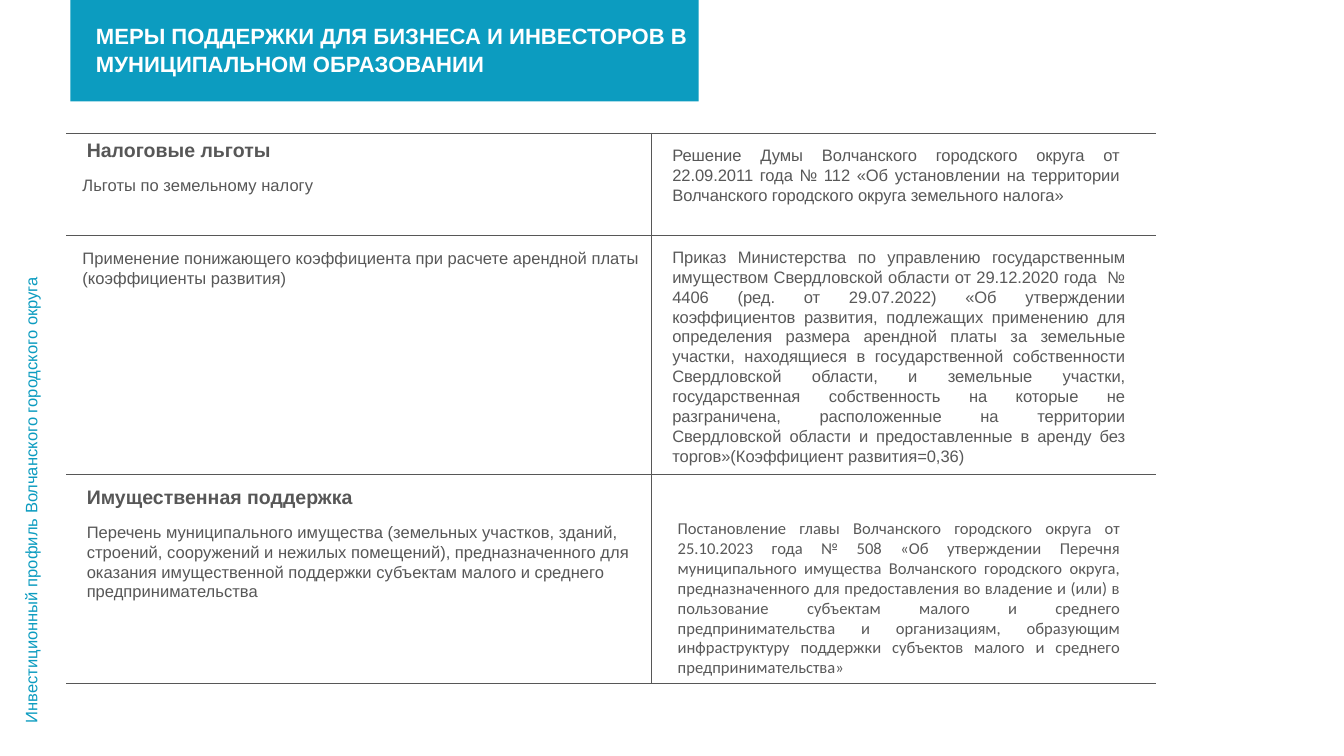
"""Build the slide on support measures for business and investors."""
from dataclasses import dataclass

from pptx import Presentation
from pptx import util as u
from pptx.dml.color import RGBColor
from pptx.enum import text
from pptx.oxml.ns import qn
from lxml import etree

SCALE = 9144


@dataclass(frozen=True)
class Theme:
    """Colours, fonts and type sizes of the slide."""
    accent: str = "0C9CC0"
    ink: str = "575757"
    soft_ink: str = "595959"
    white: str = "FFFFFF"
    font: str = "Arial"
    alt_font: str = "Calibri"
    title: float = 26
    heading: float = 23
    body: float = 19.5
    leading: float = 23.1


THEME = Theme()
TIGHT = -10
COLUMNS = (958, 825)
ROWS = (167, 392, 342)

TAX_DECISION = (
    "Решение Думы Волчанского городского округа от 22.09.2011 года № 112 "
    "«Об установлении на территории Волчанского городского округа земельного налога»")
RENT_ORDER = (
    "Приказ Министерства по управлению государственным имуществом Свердловской области "
    "от 29.12.2020 года  № 4406 (ред. от 29.07.2022) «Об утверждении коэффициентов развития, "
    "подлежащих применению для определения размера арендной платы за земельные участки, "
    "находящиеся в государственной собственности Свердловской области, и земельные участки, "
    "государственная собственность на которые не разграничена, расположенные на территории "
    "Свердловской области и предоставленные в аренду без торгов»(Коэффициент развития=0,36)")
PROPERTY_LIST = (
    "Перечень муниципального имущества (земельных участков, зданий, строений, сооружений "
    "и нежилых помещений), предназначенного для оказания имущественной поддержки субъектам "
    "малого и среднего предпринимательства")
PROPERTY_DECREE = (
    "Постановление главы Волчанского городского округа от 25.10.2023 года № 508 "
    "«Об утверждении Перечня муниципального имущества Волчанского городского округа, "
    "предназначенного для предоставления во владение и (или) в пользование субъектам малого "
    "и среднего предпринимательства и организациям, образующим инфраструктуру поддержки "
    "субъектов малого и среднего предпринимательства»")


def px(length):
    """Turn a length in px into EMU."""
    return u.Emu(length * SCALE)


def set_margins(holder, left, top, right=0, bottom=0):
    """Set the inner margins of a text frame or table cell."""
    holder.margin_left, holder.margin_top = px(left), px(top)
    holder.margin_right, holder.margin_bottom = px(right), px(bottom)


def write(frame, words, size=THEME.body, color=THEME.ink, font=THEME.font, bold=False,
          align=text.PP_ALIGN.LEFT, leading=None, tracking=0):
    """Write one formatted paragraph into a text frame."""
    para = frame.paragraphs[0]
    para.alignment = align
    if leading:
        para.line_spacing = leading
    span = para.add_run()
    span.text = words
    span.font.size, span.font.name, span.font.bold = u.Pt(size), font, bold
    span.font.color.rgb = RGBColor.from_string(color)
    if tracking:
        span.font._element.set("spc", str(tracking))


def add_title(page, words):
    """Turn the title placeholder into the coloured banner."""
    title = page.shapes.title
    title.left, title.top, title.width, title.height = map(px, (115, 0, 1028, 166))
    title.fill.solid()
    title.fill.fore_color.rgb = RGBColor.from_string(THEME.accent)
    frame = title.text_frame
    frame.auto_size = text.MSO_AUTO_SIZE.NONE
    frame.vertical_anchor = text.MSO_ANCHOR.TOP
    frame.word_wrap = True
    set_margins(frame, 42, 34)
    write(frame, words, THEME.title, THEME.white, bold=True, leading=1.06)


def add_text(page, place, words, margins=(1, 2, 0, 0), **style):
    """Add a wrapped text box and return its frame."""
    frame = page.shapes.add_textbox(*map(px, place)).text_frame
    frame.word_wrap = True
    set_margins(frame, *margins)
    write(frame, words, **style)
    return frame


def add_heading(page, top, words):
    """Add the bold heading of a support group."""
    add_text(page, (141, top, 439, 41), words, (1, 1, 0, 0), size=THEME.heading, bold=True)


def add_side_label(page, words):
    """Add the label that runs up the left edge."""
    frame = add_text(page, (35, 429, 32, 755), words, (0, 0, 0, 0),
                     color=THEME.accent, leading=u.Pt(22.8))
    frame._txBody.bodyPr.set("vert", "vert270")


def set_borders(cell, shown):
    """Draw the named cell sides and clear the others."""
    properties = cell._tc.get_or_add_tcPr()
    for index, side in enumerate("LRTB"):
        line = etree.Element(qn(f"a:ln{side}"), w=str(u.Pt(1)))
        if side in shown:
            fill = etree.SubElement(line, qn("a:solidFill"))
            etree.SubElement(fill, qn("a:srgbClr"), val=THEME.ink)
        else:
            etree.SubElement(line, qn("a:noFill"))
        properties.insert(index, line)


def add_measures_table(page):
    """Add the ruled table with the measures in its left column."""
    place = map(px, (108, 218, sum(COLUMNS), sum(ROWS)))
    table = page.shapes.add_table(len(ROWS), len(COLUMNS), *place).table
    table.first_row = table.horz_banding = False
    for column, width in zip(table.columns, COLUMNS):
        column.width = px(width)
    for row, height in zip(table.rows, ROWS):
        row.height = px(height)
        for cell, sides in zip(row.cells, ("RTB", "LTB")):
            cell.fill.background()
            set_borders(cell, sides)
    measures = (
        (71, "Льготы по земельному налогу", None),
        (22, "Применение понижающего коэффициента при расчете арендной платы "
             "(коэффициенты развития)", u.Pt(THEME.leading)),
    )
    for index, (top, words, leading) in enumerate(measures):
        cell = table.cell(index, 0)
        set_margins(cell, 27, top)
        write(cell.text_frame, words, leading=leading)


def main():
    """Build and save the deck."""
    deck = Presentation()
    deck.slide_width, deck.slide_height = px(2199), px(1237)
    page = deck.slides.add_slide(deck.slide_layouts.get_by_name("Title Only"))
    add_title(page, "МЕРЫ ПОДДЕРЖКИ ДЛЯ БИЗНЕСА И ИНВЕСТОРОВ В МУНИЦИПАЛЬНОМ ОБРАЗОВАНИИ")
    add_side_label(page, "Инвестиционный профиль Волчанского городского округа")
    add_measures_table(page)
    add_heading(page, 225, "Налоговые льготы")
    add_heading(page, 793, "Имущественная поддержка")
    add_text(page, (141, 852, 921, 132), PROPERTY_LIST, (1, 3, 0, 0),
             leading=u.Pt(THEME.leading))
    justify = text.PP_ALIGN.JUSTIFY
    add_text(page, (1099, 235, 733, 100), TAX_DECISION, align=justify, tracking=TIGHT)
    add_text(page, (1099, 402, 742, 363), RENT_ORDER, color=THEME.soft_ink,
             align=justify, tracking=TIGHT)
    add_text(page, (1099, 843, 744, 273), PROPERTY_DECREE, (10, 5, 10, 5),
             color=THEME.soft_ink, font=THEME.alt_font, align=justify)
    deck.save("out.pptx")


if __name__ == "__main__":
    main()
